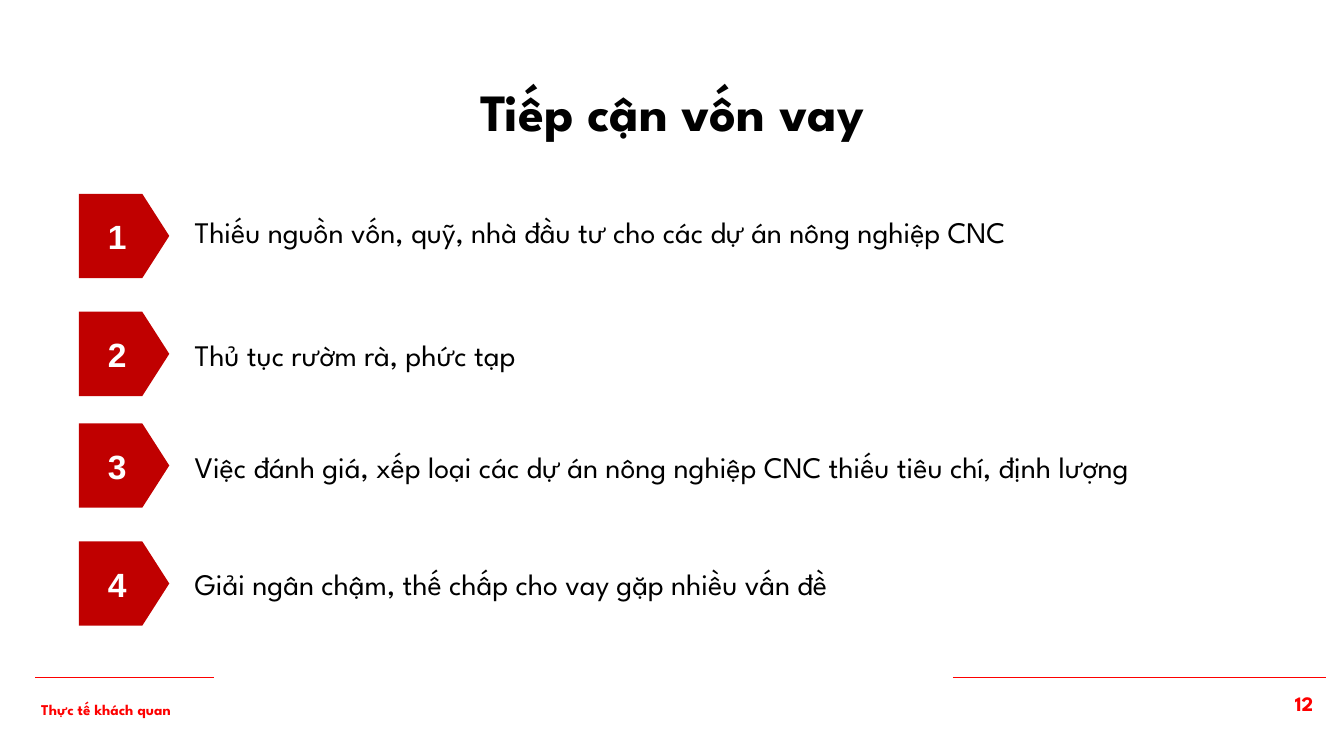
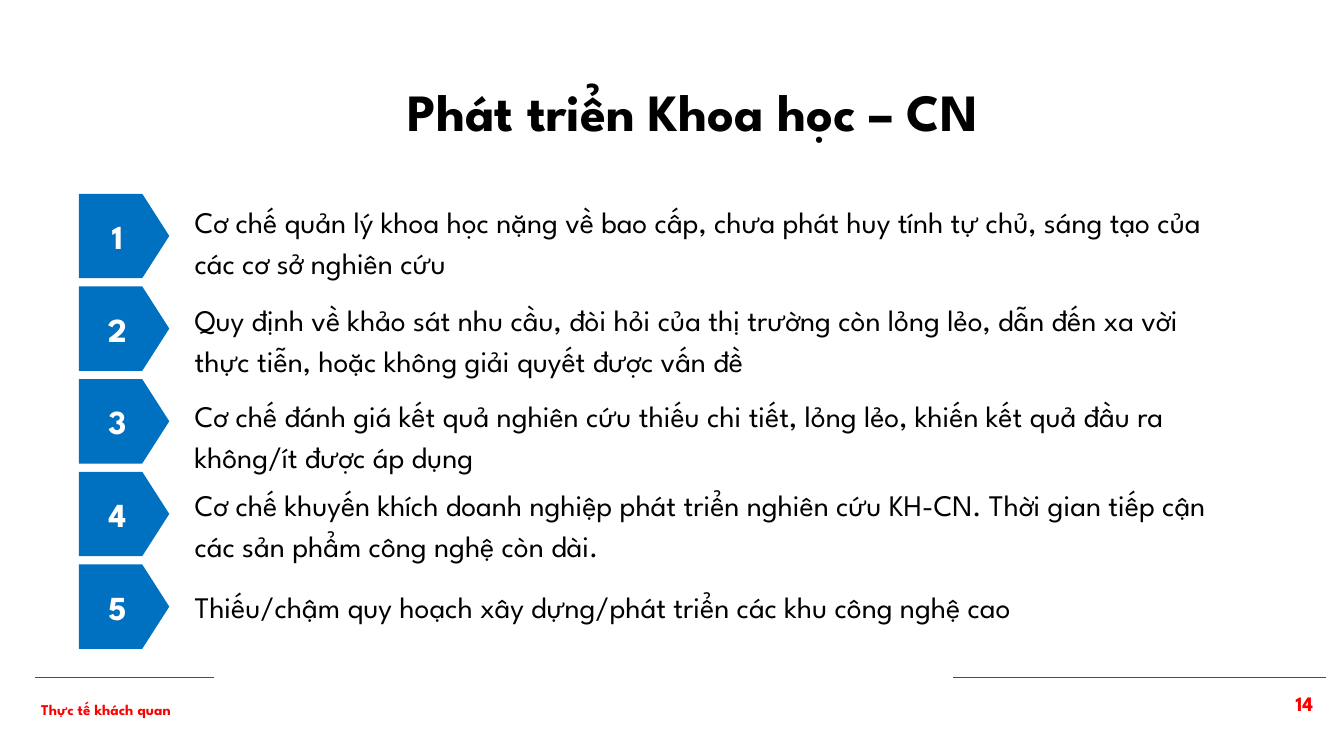
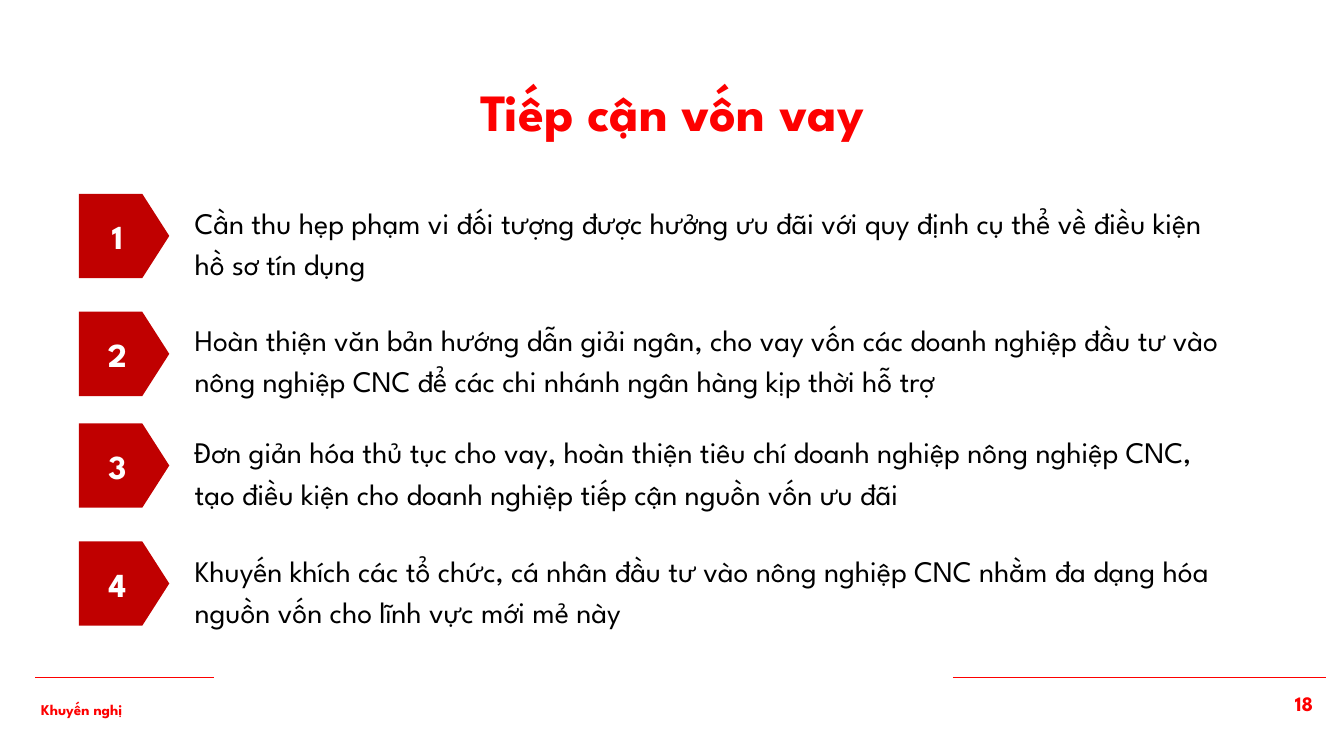
from dataclasses import dataclass

from lxml.etree import SubElement
from pptx import Presentation
from pptx.dml.color import RGBColor
from pptx.enum.shapes import MSO_CONNECTOR, MSO_SHAPE
from pptx.enum.text import MSO_ANCHOR, MSO_AUTO_SIZE, PP_ALIGN
from pptx.oxml.ns import qn
from pptx.util import Pt


@dataclass(frozen=True)
class Theme:
    """Colours, fonts and type sizes of the deck."""
    black: str = "000000"
    white: str = "FFFFFF"
    accent: str = "FD0000"
    crimson: str = "C00000"
    blue: str = "0070C0"
    font: str = "League Spartan"
    plain_font: str = "Arial"
    title_size: float = 28
    number_size: float = 18
    body_size: float = 16
    page_size: float = 11
    footer_size: float = 8
    inset: float = 7.2
    rule_width: float = 0.75


class PageBuilder:
    """Holds the theme and the current slide, and draws each kind of element."""

    def __init__(self, deck, theme):
        """Keep the deck and the theme."""
        self.deck = deck
        self.theme = theme
        self.page = None

    def start(self, title, title_left, title_color):
        """Add a slide and format its title, which ends at a fixed right edge."""
        self.page = self.deck.slides.add_slide(self.deck.slide_layouts[5])
        box = self.page.shapes.title
        place = {"left": title_left, "top": 35.3, "width": 663.8 - title_left, "height": 45.4}
        for name, value in place.items():
            setattr(box, name, Pt(value))
        self.set_text(box, title, self.theme.title_size, title_color,
                      bold=True, alignment=PP_ALIGN.CENTER)

    def set_text(self, box, text, size, color, font=None, bold=False,
                 anchor=MSO_ANCHOR.TOP, **paragraph_format):
        """Put one formatted paragraph in a shape."""
        frame = box.text_frame
        inset = Pt(self.theme.inset)
        frame_format = {
            "word_wrap": True, "auto_size": MSO_AUTO_SIZE.NONE, "vertical_anchor": anchor,
            "margin_left": inset, "margin_right": inset,
            "margin_top": inset, "margin_bottom": inset,
        }
        para = frame.paragraphs[0]
        span = para.add_run()
        span.text = text
        span_format = {"size": Pt(size), "name": font or self.theme.font, "bold": bold}
        for target, values in ((frame, frame_format), (para, paragraph_format),
                               (span.font, span_format)):
            for name, value in values.items():
                setattr(target, name, value)
        span.font.color.rgb = RGBColor.from_string(color)

    def text(self, left, top, width, height, text, size, color, **text_format):
        """Add a text box."""
        box = self.page.shapes.add_textbox(Pt(left), Pt(top), Pt(width), Pt(height))
        self.set_text(box, text, size, color, **text_format)

    def marker(self, top, number, color, font):
        """Add a numbered arrow tag."""
        tag = self.page.shapes.add_shape(
            MSO_SHAPE.PENTAGON, Pt(42.3), Pt(top), Pt(48.4), Pt(45.2))
        tag.adjustments[0] = 0.32
        tag.shadow.inherit = False
        tag.fill.solid()
        tag.fill.fore_color.rgb = RGBColor.from_string(color)
        tag.line.fill.background()
        self.set_text(tag, str(number), self.theme.number_size, self.theme.white, font=font,
                      bold=True, anchor=MSO_ANCHOR.MIDDLE, alignment=PP_ALIGN.CENTER)

    def rule(self, start, end):
        """Add a horizontal footer line."""
        line = self.page.shapes.add_connector(
            MSO_CONNECTOR.STRAIGHT, Pt(start), Pt(363), Pt(end), Pt(363))
        line.line.color.rgb = RGBColor.from_string(self.theme.accent)
        line.line.width = Pt(self.theme.rule_width)
        SubElement(line._element.spPr, qn("a:effectLst"))

    def footer(self, section, page_number):
        """Add the footer lines, section name and page number."""
        theme = self.theme
        self.rule(114.4, 18.7)
        self.rule(510.5, 710.6)
        self.text(664.6, 362.9, 46, 31, page_number, theme.page_size, theme.accent,
                  bold=True, alignment=PP_ALIGN.RIGHT)
        self.text(15, 367.9, 126.7, 21.6, section, theme.footer_size, theme.accent, bold=True)

    def items(self, marker_tops, rows, color, font):
        """Add numbered rows, each a tag with its statement."""
        for number, (marker_top, (text_top, height, text)) in enumerate(zip(marker_tops, rows), 1):
            self.marker(marker_top, number, color, font)
            self.text(97.2, text_top, 566.6, height, text, self.theme.body_size,
                      self.theme.black, line_spacing=1.15)


def main():
    """Build the three slides and save the deck."""
    deck = Presentation()
    deck.slide_width, deck.slide_height = Pt(720), Pt(405)
    theme = Theme()
    builder = PageBuilder(deck, theme)
    single, double = 38.9, 55.8
    four_tops = [103.8, 167, 226.8, 290]
    five_tops = [103.8 + 49.65 * index for index in range(5)]
    pages = [
        {
            "heading": ("Tiếp cận vốn vay", 56.2, theme.black),
            "footer": ("Thực tế khách quan", "12"),
            "tags": (theme.crimson, theme.plain_font),
            "tops": four_tops,
            "rows": [
                (104.2, single, "Thiếu nguồn vốn, quỹ, nhà đầu tư cho các dự án nông nghiệp CNC"),
                (170.1, single, "Thủ tục rườm rà, phức tạp"),
                (230.2, single, "Việc đánh giá, xếp loại các dự án nông nghiệp CNC thiếu tiêu chí, "
                                "định lượng"),
                (292.9, single, "Giải ngân chậm, thế chấp cho vay gặp nhiều vấn đề"),
            ],
        },
        {
            "heading": ("Phát triển Khoa học – CN", 78.4, theme.black),
            "footer": ("Thực tế khách quan", "14"),
            "tags": (theme.blue, theme.font),
            "tops": five_tops,
            "rows": [
                (99, double, "Cơ chế quản lý khoa học nặng về bao cấp, chưa phát huy tính tự chủ, "
                             "sáng tạo của các cơ sở nghiên cứu"),
                (151.4, double, "Quy định về khảo sát nhu cầu, đòi hỏi của thị trường còn lỏng lẻo, "
                                "dẫn đến xa vời thực tiễn, hoặc không giải quyết được vấn đề"),
                (202.9, double, "Cơ chế đánh giá kết quả nghiên cứu thiếu chi tiết, lỏng lẻo, "
                                "khiến kết quả đầu ra không/ít được áp dụng"),
                (250.6, double, "Cơ chế khuyến khích doanh nghiệp phát triển nghiên cứu KH-CN. "
                                "Thời gian tiếp cận các sản phẩm công nghệ còn dài."),
                (305.3, single, "Thiếu/chậm quy hoạch xây dựng/phát triển các khu công nghệ cao"),
            ],
        },
        {
            "heading": ("Tiếp cận vốn vay", 56.2, theme.accent),
            "footer": ("Khuyến nghị", "18"),
            "tags": (theme.crimson, theme.font),
            "tops": four_tops,
            "rows": [
                (99.4, double, "Cần thu hẹp phạm vi đối tượng được hưởng ưu đãi với quy định cụ thể "
                               "về điều kiện hồ sơ tín dụng"),
                (162, double, "Hoàn thiện văn bản hướng dẫn giải ngân, cho vay vốn các doanh nghiệp "
                              "đầu tư vào nông nghiệp CNC để các chi nhánh ngân hàng kịp thời hỗ trợ"),
                (222.5, double, "Đơn giản hóa thủ tục cho vay, hoàn thiện tiêu chí doanh nghiệp "
                                "nông nghiệp CNC, tạo điều kiện cho doanh nghiệp tiếp cận nguồn vốn "
                                "ưu đãi"),
                (285.8, double, "Khuyến khích các tổ chức, cá nhân đầu tư vào nông nghiệp CNC nhằm "
                                "đa dạng hóa nguồn vốn cho lĩnh vực mới mẻ này"),
            ],
        },
    ]
    for content in pages:
        builder.start(*content["heading"])
        builder.items(content["tops"], content["rows"], *content["tags"])
        builder.footer(*content["footer"])
    deck.save("out.pptx")


if __name__ == "__main__":
    main()
